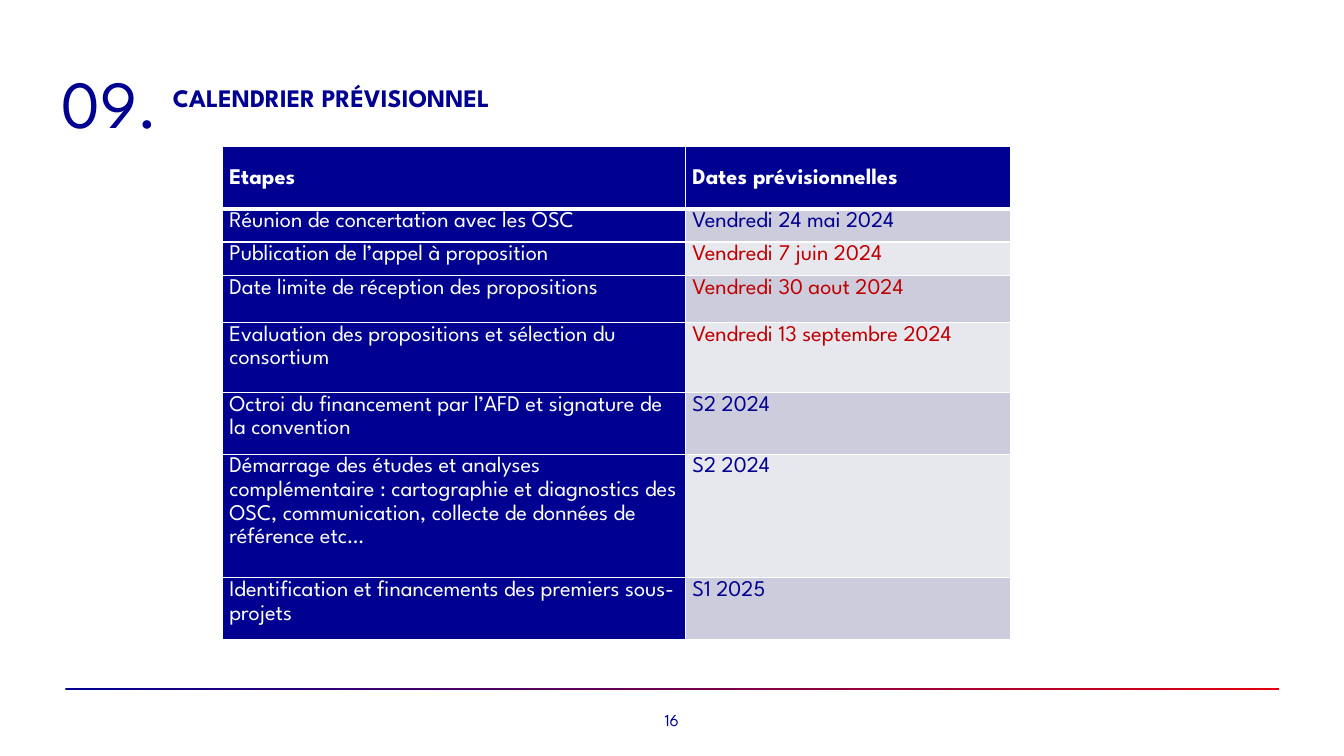
from dataclasses import dataclass

from lxml.etree import SubElement
from pptx import Presentation
from pptx.dml.color import RGBColor
from pptx.enum.shapes import MSO_SHAPE as Shape
from pptx.enum.text import MSO_ANCHOR as Anchor, PP_ALIGN as Align
from pptx.oxml.ns import qn
from pptx.util import Cm, Pt


@dataclass(frozen=True)
class Theme:
    font: str = "League Spartan"
    blue: str = "000091"
    red: str = "E1000F"
    dark_red: str = "C00000"
    white: str = "FFFFFF"
    bands: tuple = ("CCCCDC", "E7E7EE")
    number_size: int = 48
    title_size: int = 18
    table_size: int = 16
    page_size: int = 12


THEME = Theme()

HEADER = ("Etapes", "Dates prévisionnelles")

# Step, planned date, date colour, row height in cm
STEPS = [
    ("Réunion de concertation avec les OSC", "Vendredi 24 mai 2024", THEME.blue, 0.84),
    ("Publication de l’appel à proposition", "Vendredi 7 juin 2024", THEME.dark_red, 0.84),
    ("Date limite de réception des propositions", "Vendredi 30 aout 2024",
     THEME.dark_red, 1.19),
    ("Evaluation des propositions et sélection du consortium",
     "Vendredi 13 septembre 2024", THEME.dark_red, 1.76),
    ("Octroi du financement par l’AFD et signature de la convention", "S2 2024",
     THEME.blue, 1.19),
    ("Démarrage des études et analyses complémentaire : cartographie et diagnostics "
     "des OSC, communication, collecte de données de référence etc…", "S2 2024",
     THEME.blue, 2.67),
    ("Identification et financements des premiers sous-projets", "S1 2025",
     THEME.blue, 1.19),
]
HEADER_HEIGHT = 1.57
COLUMN_WIDTHS = (11.67, 8.21)


def rgb(value):
    return RGBColor.from_string(value)


def format_font(paragraph, size, color, bold=False):
    for run in paragraph.runs:
        run.font.name = THEME.font
        run.font.size = Pt(size)
        run.font.bold = bold
        run.font.color.rgb = rgb(color)


def add_text(slide, text, box, size, bold=False, anchor=Anchor.TOP,
             align=Align.LEFT, margin_top=0.13):
    shape = slide.shapes.add_textbox(*map(Cm, box))
    frame = shape.text_frame
    frame.word_wrap = True
    frame.vertical_anchor = anchor
    frame.margin_top = Cm(margin_top)
    frame.text = text
    paragraph = frame.paragraphs[0]
    paragraph.alignment = align
    format_font(paragraph, size, THEME.blue, bold)


def add_gradient_rule(slide, box):
    shape = slide.shapes.add_shape(Shape.RECTANGLE, *map(Cm, box))
    shape.shadow.inherit = False
    shape.line.fill.background()
    shape.fill.gradient()
    shape.fill.gradient_angle = 0
    for stop, color, position in zip(shape.fill.gradient_stops,
                                     (THEME.blue, THEME.red), (0, 1)):
        stop.color.rgb = rgb(color)
        stop.position = position


def set_borders(cell, widths):
    properties = cell._tc.get_or_add_tcPr()
    for index, (side, width) in enumerate(widths.items()):
        line = properties.makeelement(qn(f"a:{side}"), {"w": str(Pt(width))})
        fill = SubElement(line, qn("a:solidFill"))
        SubElement(fill, qn("a:srgbClr"), val=THEME.white)
        properties.insert(index, line)


def fill_cell(cell, text, fill, color, header=False, below_header=False):
    cell.fill.solid()
    cell.fill.fore_color.rgb = rgb(fill)
    cell.margin_left = cell.margin_right = Cm(0.18)
    cell.margin_top = cell.margin_bottom = 0
    cell.vertical_anchor = Anchor.MIDDLE if header else Anchor.TOP
    cell.text = text
    paragraph = cell.text_frame.paragraphs[0]
    paragraph.line_spacing = 1.15
    format_font(paragraph, THEME.table_size, color, header)
    set_borders(cell, {"lnL": 1, "lnR": 1, "lnT": 3 if below_header else 1,
                       "lnB": 3 if header else 1})


def add_schedule(slide, left, top):
    heights = [HEADER_HEIGHT] + [step[3] for step in STEPS]
    table = slide.shapes.add_table(
        len(heights), len(COLUMN_WIDTHS), Cm(left), Cm(top),
        Cm(sum(COLUMN_WIDTHS)), Cm(sum(heights))).table
    for column, width in zip(table.columns, COLUMN_WIDTHS):
        column.width = Cm(width)
    for row, height in zip(table.rows, heights):
        row.height = Cm(height)

    for column, label in enumerate(HEADER):
        fill_cell(table.cell(0, column), label, THEME.blue, THEME.white, header=True)
    for row, (step, date, color, _) in enumerate(STEPS, start=1):
        band = THEME.bands[(row - 1) % 2]
        first = row == 1
        fill_cell(table.cell(row, 0), step, THEME.blue, THEME.white, below_header=first)
        fill_cell(table.cell(row, 1), date, band, color, below_header=first)


def main():
    presentation = Presentation()
    presentation.slide_width = Cm(33.87)
    presentation.slide_height = Cm(19.05)
    slide = presentation.slides.add_slide(presentation.slide_layouts[6])

    # Heading
    add_text(slide, "CALENDRIER PRÉVISIONNEL", (4.11, 1.17, 28.09, 1.8),
             THEME.title_size, bold=True, anchor=Anchor.BOTTOM)
    add_text(slide, "09.", (1.3, 0.91, 3.51, 2.49), THEME.number_size, margin_top=0.63)

    # Schedule
    add_schedule(slide, 5.6, 3.69)

    # Footer
    add_gradient_rule(slide, (1.65, 17.35, 30.58, 0.05))
    add_text(slide, "16", (16.18, 17.7, 1.5, 0.89), THEME.page_size,
             anchor=Anchor.MIDDLE, align=Align.CENTER)

    presentation.save("out.pptx")


if __name__ == "__main__":
    main()
